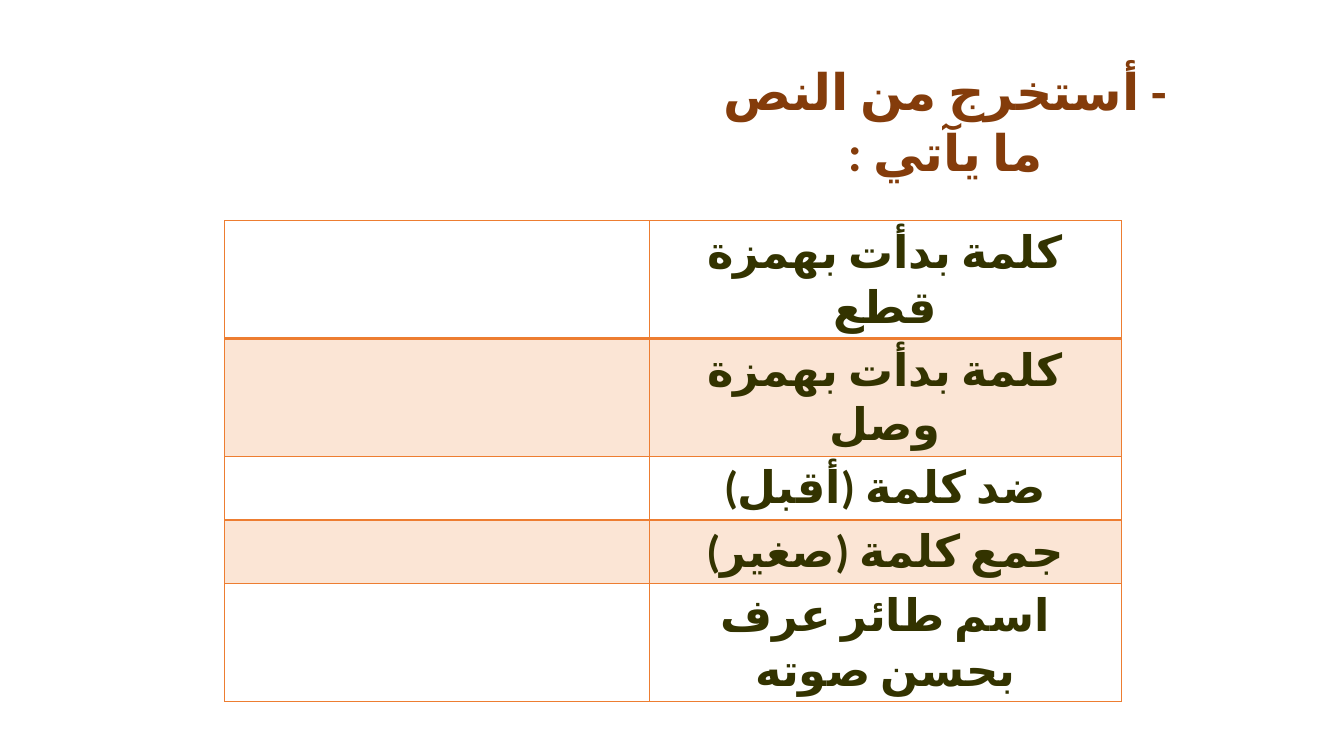
from lxml import etree
from pptx import Presentation
from pptx.dml.color import RGBColor
from pptx.enum.text import MSO_AUTO_SIZE, PP_ALIGN
from pptx.oxml.ns import qn
from pptx.util import Inches, Pt

CENTER = PP_ALIGN.CENTER
GROW = MSO_AUTO_SIZE.SHAPE_TO_FIT_TEXT
FONT = "Calibri"
COLORS = {"title": "843C0B", "prompt": "333300", "accent": "ED7D31"}

TITLE = "- أستخرج من النص ما يآتي :"
PROMPTS = [
    "كلمة بدأت بهمزة قطع",
    "كلمة بدأت بهمزة وصل",
    "ضد كلمة (أقبل)",
    "جمع كلمة (صغير)",
    "اسم طائر عرف بحسن صوته",
]
COLUMN_WIDTHS = [4.21, 4.68]
ROW_HEIGHT = 0.41
TINT_PERCENT = 20


def write_arabic(frame, text, size, color):
    """Fill a text frame with one bold, centred, right-to-left paragraph."""
    frame.text = text
    para = frame.paragraphs[0]
    para.alignment = CENTER
    para._p.get_or_add_pPr().set("rtl", "1")
    span = para.runs[0]
    span.font.size = Pt(size)
    span.font.bold = True
    span.font.name = FONT
    span.font.color.rgb = RGBColor.from_string(COLORS[color])
    properties = span._r.get_or_add_rPr()
    properties.set("lang", "ar-SA")
    etree.SubElement(properties, qn("a:cs")).set("typeface", FONT)


def add_borders(cell, bottom_width):
    """Outline a cell; border elements must precede its fill."""
    properties = cell._tc.get_or_add_tcPr()
    widths = {"a:lnL": 1, "a:lnR": 1, "a:lnT": 1, "a:lnB": bottom_width}
    for position, (side, width) in enumerate(widths.items()):
        line = etree.Element(qn(side), w=str(Pt(width)))
        fill = etree.SubElement(line, qn("a:solidFill"))
        etree.SubElement(fill, qn("a:srgbClr"), val=COLORS["accent"])
        properties.insert(position, line)


def fill_cell(cell, tinted):
    if not tinted:
        cell.fill.background()
        return
    cell.fill.solid()
    cell.fill.fore_color.rgb = RGBColor.from_string(COLORS["accent"])
    color = cell._tc.tcPr.find(".//" + qn("a:srgbClr"))
    etree.SubElement(color, qn("a:alpha"), val=str(TINT_PERCENT * 1000))


deck = Presentation()
deck.slide_width, deck.slide_height = Inches(13.33), Inches(7.5)
page = deck.slides.add_slide(deck.slide_layouts[6])

title = page.shapes.add_textbox(Inches(6.82), Inches(0.55), Inches(5.11), Inches(0.71))
title.text_frame.word_wrap = True
title.text_frame.auto_size = GROW
write_arabic(title.text_frame, TITLE, 36, "title")

table = page.shapes.add_table(
    len(PROMPTS), len(COLUMN_WIDTHS), Inches(2.23), Inches(2.19),
    Inches(sum(COLUMN_WIDTHS)), Inches(ROW_HEIGHT * len(PROMPTS)),
).table
table.first_row = False
table.horz_banding = False
for column, width in zip(table.columns, COLUMN_WIDTHS):
    column.width = Inches(width)

for index, prompt in enumerate(PROMPTS):
    table.rows[index].height = Inches(ROW_HEIGHT)
    write_arabic(table.cell(index, 1).text_frame, prompt, 32, "prompt")
    for cell in table.rows[index].cells:
        fill_cell(cell, tinted=index % 2 == 1)
        add_borders(cell, bottom_width=2 if index == 0 else 1)

deck.save("out.pptx")
